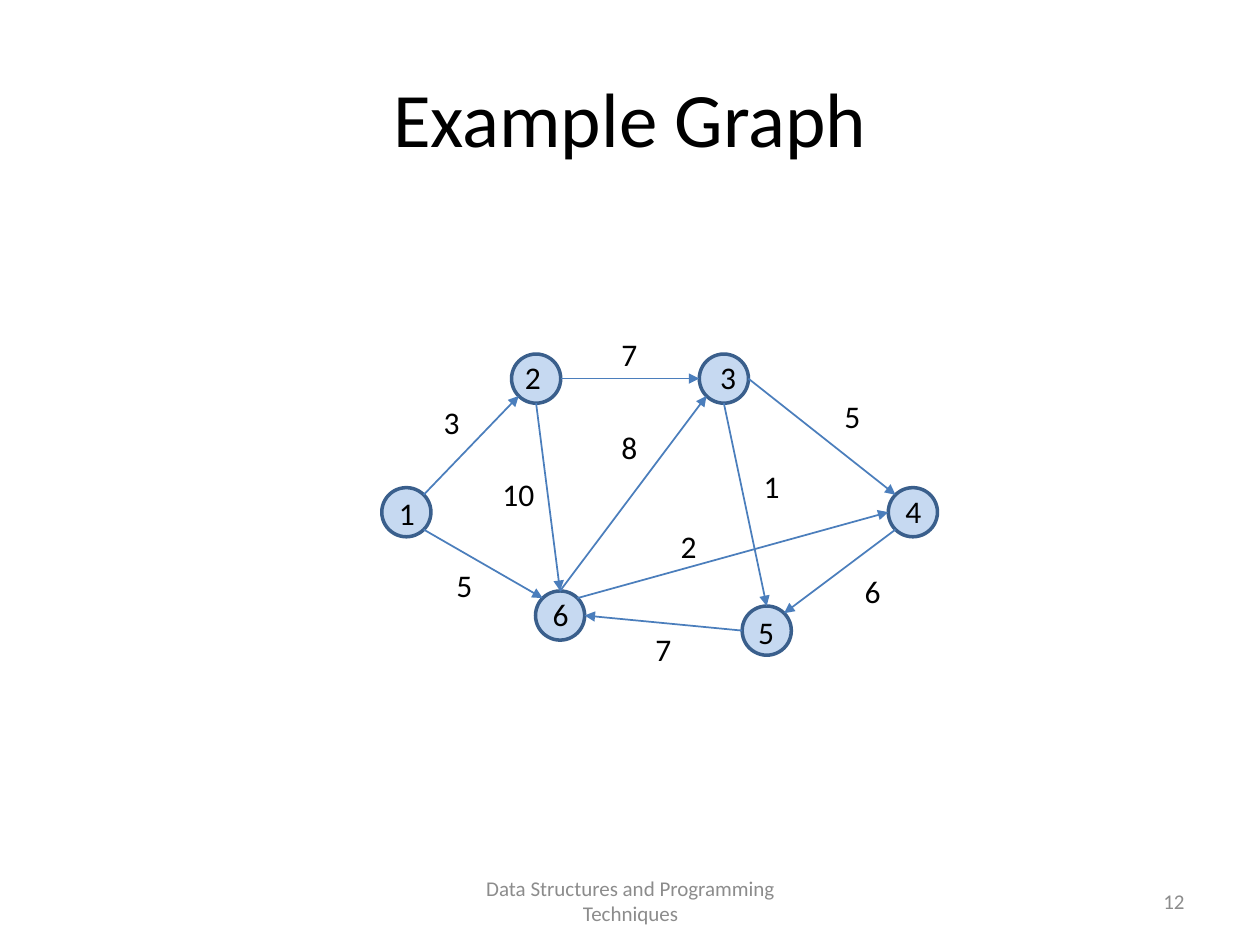
import math

import lxml.etree
import pptx
import pptx.dml.color
import pptx.enum.shapes
import pptx.enum.text
import pptx.oxml.ns
import pptx.util

PX = 9144  # EMU per px, at 100 px to the inch
FONT = "Calibri"
COLORS = {"text": "000000", "footer": "8C8C8C", "node": "C6D9F1",
          "outline": "3A5F8C", "edge": "4B7EBC"}
DIAMETER = 39
LABEL_HEIGHT = 40
ALIGN = pptx.enum.text.PP_ALIGN
ANCHOR = pptx.enum.text.MSO_ANCHOR
AUTO_SIZE = pptx.enum.text.MSO_AUTO_SIZE


def rgb(name):
    return pptx.dml.color.RGBColor.from_string(COLORS[name])


def write(box, text, size, color="text", align=ALIGN.CENTER, **frame_format):
    """Put one formatted paragraph into a shape's text frame."""
    frame = box.text_frame
    for attribute, value in {"word_wrap": True, **frame_format}.items():
        setattr(frame, attribute, value)
    paragraph = frame.paragraphs[0]
    paragraph.alignment = align
    run = paragraph.add_run()
    run.text = text
    for attribute, value in {"name": FONT, "size": pptx.util.Pt(size)}.items():
        setattr(run.font, attribute, value)
    run.font.color.rgb = rgb(color)


deck = pptx.Presentation()
deck.slide_width, deck.slide_height = 1000 * PX, 750 * PX
slide = deck.slides.add_slide(deck.slide_layouts[5])
shapes = slide.shapes

title = shapes.title
title_place = {"left": 50, "top": 30, "width": 900, "height": 125}
for attribute, value in title_place.items():
    setattr(title, attribute, value * PX)
write(title, "Example Graph", 44, vertical_anchor=ANCHOR.MIDDLE)

footers = [
    (342, 317, "Data Structures and Programming Techniques", ALIGN.CENTER),
    (717, 233, "12", ALIGN.RIGHT),
]
for left, width, text, align in footers:
    footer = shapes.add_textbox(left * PX, 695 * PX, width * PX, 40 * PX)
    write(footer, text, 12, "footer", align, vertical_anchor=ANCHOR.MIDDLE)

# Node number: left and top of its circle, left and top of its label
nodes = {
    5: (589, 481, 591, 482),
    6: (425, 469, 428, 467),
    1: (303, 387, 306, 387),
    2: (406, 281, 406, 279),
    3: (555, 281, 561, 279),
    4: (705, 387, 708, 386),
}
for left, top, _, _ in nodes.values():
    circle = shapes.add_shape(pptx.enum.shapes.MSO_SHAPE.OVAL,
                              left * PX, top * PX, DIAMETER * PX, DIAMETER * PX)
    circle.shadow.inherit = False
    circle.fill.solid()
    circle.fill.fore_color.rgb = rgb("node")
    circle.line.color.rgb = rgb("outline")
    circle.line.width = pptx.util.Pt(2)

# Degrees clockwise from the right of a circle, where edges touch it
RIGHT, LOWER_RIGHT, BOTTOM, LOWER_LEFT = 0, 45, 90, 135
LEFT, UPPER_LEFT, TOP, UPPER_RIGHT = 180, 225, 270, 315

# Start node and side, end node and side, weight, left and top of the weight
edges = [
    (1, UPPER_RIGHT, 2, LOWER_LEFT, 3, 335, 315),
    (2, RIGHT, 3, LEFT, 7, 476, 261),
    (3, RIGHT, 4, UPPER_LEFT, 5, 653, 310),
    (4, LOWER_LEFT, 5, UPPER_RIGHT, 6, 669, 449),
    (5, LEFT, 6, RIGHT, 7, 503, 495),
    (6, UPPER_RIGHT, 4, LEFT, 2, 523, 413),
    (6, TOP, 3, LOWER_LEFT, 8, 476, 335),
    (2, BOTTOM, 6, TOP, 10, 388, 372),
    (1, LOWER_RIGHT, 6, UPPER_LEFT, 5, 345, 444),
    (3, BOTTOM, 5, TOP, 1, 589, 366),
]
for start, start_side, end, end_side, *_ in edges:
    ends = []
    for node, side in ((start, start_side), (end, end_side)):
        angle = math.radians(side)
        for corner, reach in zip(nodes[node], (math.cos(angle), math.sin(angle))):
            ends.append(round((corner + DIAMETER / 2 * (1 + reach)) * PX))
    edge = shapes.add_connector(pptx.enum.shapes.MSO_CONNECTOR.STRAIGHT, *ends)
    edge.line.color.rgb = rgb("edge")
    edge.line.width = pptx.util.Pt(1)
    arrowhead = lxml.etree.SubElement(edge.line._get_or_add_ln(),
                                      pptx.oxml.ns.qn("a:tailEnd"))
    arrowhead.set("type", "triangle")
    lxml.etree.SubElement(edge._element.spPr, pptx.oxml.ns.qn("a:effectLst"))

labels = [(number, left, top, 34) for number, (_, _, left, top) in nodes.items()]
labels += [(weight, left, top, 47) for *_, weight, left, top in edges]
for value, left, top, width in labels:
    label = shapes.add_textbox(left * PX, top * PX, width * PX, LABEL_HEIGHT * PX)
    write(label, str(value), 18, auto_size=AUTO_SIZE.SHAPE_TO_FIT_TEXT)

deck.save("out.pptx")
